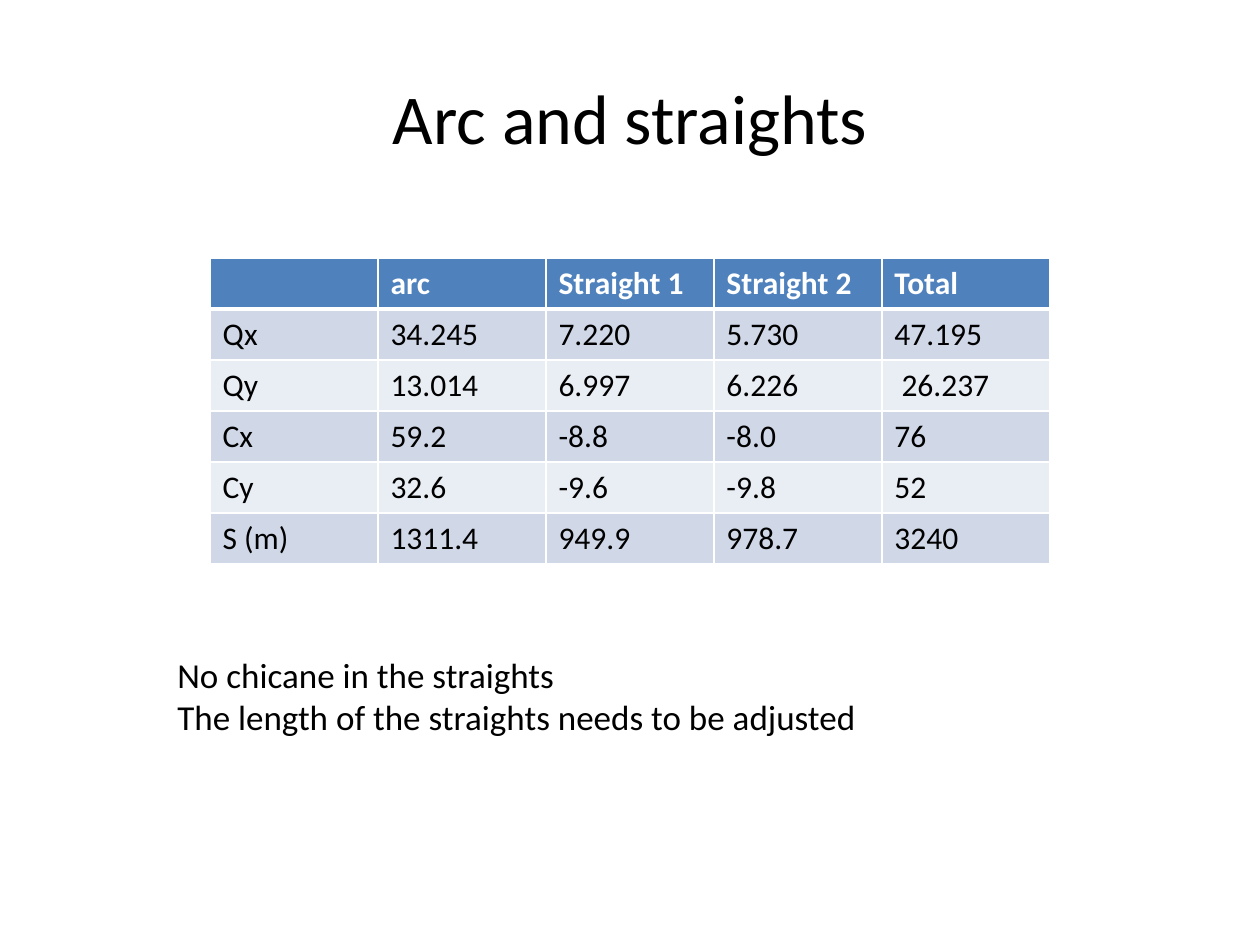
from pptx import Presentation
from pptx.dml.color import RGBColor
from pptx.enum.text import MSO_ANCHOR as Anchor, PP_ALIGN as Align
from pptx.oxml import parse_xml
from pptx.oxml.ns import nsdecls
from pptx.util import Emu, Pt

EMU_PER_PX = 914400 / 126
HEADER, BAND_DARK, BAND_LIGHT = "4F81BD", "D0D8E8", "E9EDF4"
ROWS = [
    ["", "arc", "Straight 1", "Straight 2", "Total"],
    ["Qx", "34.245", "7.220", "5.730", "47.195"],
    ["Qy", "13.014", "6.997", "6.226", " 26.237"],
    ["Cx", "59.2", "-8.8", "-8.0", "76"],
    ["Cy", "32.6", "-9.6", "-9.8", "52"],
    ["S (m)", "1311.4", "949.9", "978.7", "3240"],
]
NOTES = ["No chicane in the straights", "The length of the straights needs to be adjusted"]


def px(length):
    return Emu(round(length * EMU_PER_PX))


def color(value):
    return RGBColor.from_string(value)


class SlideBuilder:
    """Hold the text style and the current slide, and add elements to it."""

    def __init__(self, slide, font="Calibri", ink="000000", paper="FFFFFF"):
        self.slide, self.font, self.ink, self.paper = slide, font, ink, paper

    def fill_text(self, frame, lines, ink=None, align=Align.LEFT, **font_format):
        for index, line in enumerate(lines):
            para = frame.paragraphs[0] if index == 0 else frame.add_paragraph()
            para.alignment = align
            span = para.add_run()
            span.text = line
            span.font.color.rgb = color(ink or self.ink)
            for name, value in {"name": self.font, **font_format}.items():
                setattr(span.font, name, value)

    def text(self, left, top, width, height, lines, size, align=Align.LEFT, anchor=Anchor.TOP):
        box = self.slide.shapes.add_textbox(px(left), px(top), px(width), px(height))
        frame = box.text_frame
        for name, value in {"word_wrap": True, "vertical_anchor": anchor}.items():
            setattr(frame, name, value)
        self.fill_text(frame, lines, align=align, size=Pt(size))

    def borders(self, cell, widths):
        properties = cell._tc.get_or_add_tcPr()
        for index, (side, width) in enumerate(widths.items()):
            properties.insert(index, parse_xml(
                f'<a:ln{side} {nsdecls("a")} w="{Pt(width)}"><a:solidFill>'
                f'<a:srgbClr val="{self.paper}"/></a:solidFill></a:ln{side}>'))

    def table(self, left, top, column_width, row_height, rows, size):
        width, height = column_width * len(rows[0]), row_height * len(rows)
        grid = self.slide.shapes.add_table(
            len(rows), len(rows[0]), px(left), px(top), px(width), px(height)).table
        for column in grid.columns:
            column.width = px(column_width)
        for row_index, values in enumerate(rows):
            grid.rows[row_index].height = px(row_height)
            is_header = row_index == 0
            fill = HEADER if is_header else BAND_DARK if row_index % 2 else BAND_LIGHT
            ink = self.paper if is_header else self.ink
            widths = {"L": 1, "R": 1, "T": 3 if row_index == 1 else 1, "B": 3 if is_header else 1}
            for column_index, value in enumerate(values):
                cell = grid.cell(row_index, column_index)
                cell.fill.solid()
                cell.fill.fore_color.rgb = color(fill)
                self.borders(cell, widths)
                if value:
                    self.fill_text(cell.text_frame, [value], ink, size=Pt(size), bold=is_header)


def main():
    deck = Presentation()
    deck.slide_width, deck.slide_height = px(1260), px(945)
    page = SlideBuilder(deck.slides.add_slide(deck.slide_layouts[6]))
    page.text(63, 38, 1134, 158, ["Arc and straights"], 40, Align.CENTER, Anchor.MIDDLE)
    page.table(210, 258, 168, 51, ROWS, 18)
    page.text(165, 647, 805, 97, NOTES, 20)
    deck.save("out.pptx")


if __name__ == "__main__":
    main()
